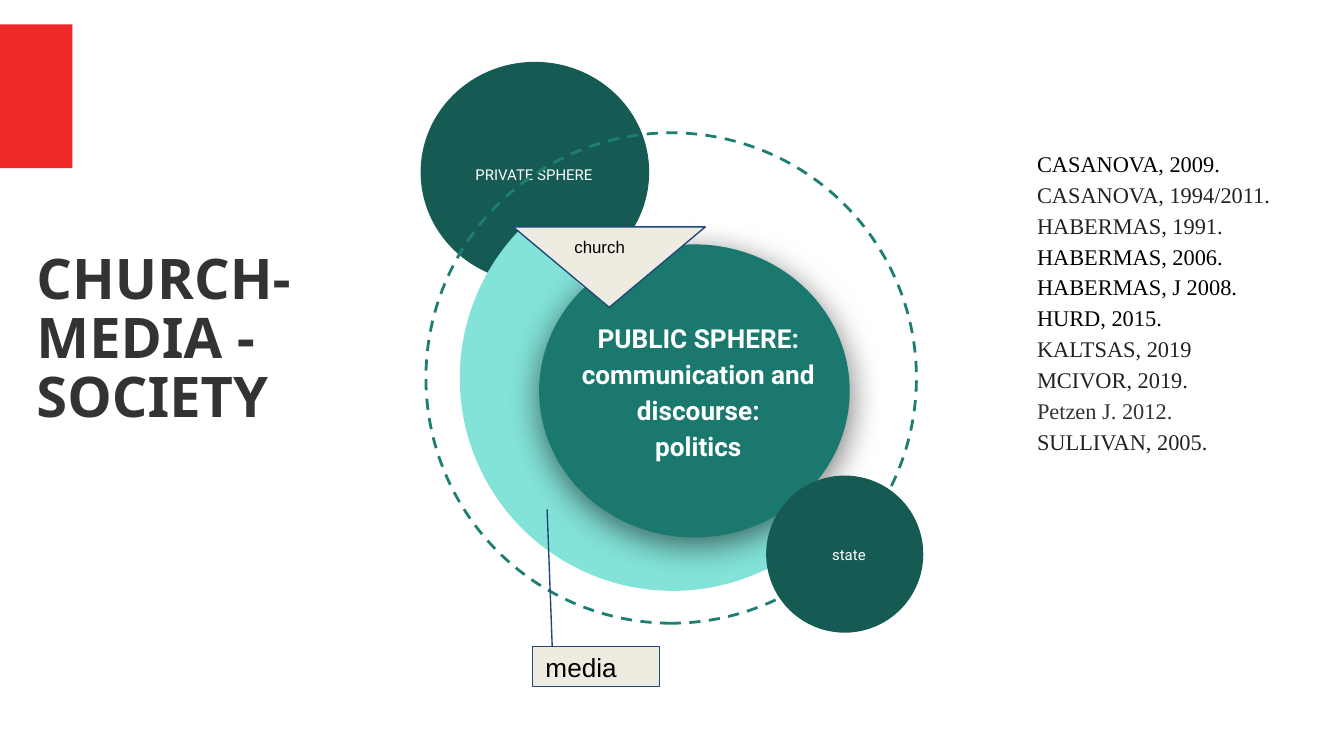
from lxml.etree import SubElement
from pptx import Presentation
from pptx.dml.color import RGBColor
from pptx.enum.dml import MSO_LINE
from pptx.enum.shapes import MSO_CONNECTOR, MSO_SHAPE
from pptx.enum.text import MSO_ANCHOR, MSO_AUTO_SIZE, PP_ALIGN
from pptx.oxml.ns import qn
from pptx.util import Cm, Pt

RED, DARK, TEAL, MINT = "EF2929", "155B54", "1B786E", "83E3D9"
DASH, NAVY, SAND = "1D7E74", "1F497D", "EEECE1"
WHITE, BLACK, GREY, INK = "FFFFFF", "000000", "333333", "222222"

# One list of (text, colour) runs per paragraph
REFS = [
    [("CASANOVA, 2009.", BLACK)],
    [("CASANOVA, 1994/2011.", INK)],
    [("HABERMAS, 1991. ", INK), ("HABERMAS, 2006. HABERMAS, J 2008.", BLACK)],
    [("HURD, 2015.", BLACK)],
    [("KALTSAS, 2019", INK)],
    [("MCIVOR, 2019.", INK)],
    [("Petzen J. 2012.", GREY)],
    [("SULLIVAN, 2005.", INK)],
]


def color(code):
    return RGBColor.from_string(code)


class Deck:
    font = "Roboto"
    pad = 0.25
    lead = 1.15

    def __init__(self, wide, high):
        self.prs = Presentation()
        self.prs.slide_width, self.prs.slide_height = Cm(wide), Cm(high)
        self.slide = self.prs.slides.add_slide(self.prs.slide_layouts[6])

    def shape(self, kind, box, fill=None, line=None, width=0.75):
        item = self.slide.shapes.add_shape(kind, *map(Cm, box))
        item.shadow.inherit = False
        if fill:
            item.fill.solid()
            item.fill.fore_color.rgb = color(fill)
        else:
            item.fill.background()
        if line:
            item.line.color.rgb = color(line)
            item.line.width = Pt(width)
        else:
            item.line.fill.background()
        return item

    def glow(self, item, blur, dist, alpha):
        """Cast a soft black shadow straight down."""
        fx = item._element.spPr.find(qn("a:effectLst"))
        cast = SubElement(fx, qn("a:outerShdw"), blurRad=str(Pt(blur)),
                          dist=str(Pt(dist)), dir="5400000",
                          algn="bl", rotWithShape="0")
        tint = SubElement(cast, qn("a:srgbClr"), val=BLACK)
        SubElement(tint, qn("a:alpha"), val=str(alpha * 1000))

    def put(self, item, paras, size, font=None, bold=False, lead=None,
            align=PP_ALIGN.LEFT, pad=None, indent=0,
            anchor=MSO_ANCHOR.MIDDLE):
        """Fill an item with paragraphs, each a list of (text, colour) runs."""
        frame = item.text_frame
        frame.word_wrap = True
        frame.vertical_anchor = anchor
        inset = Cm(self.pad if pad is None else pad)
        frame.margin_left = frame.margin_right = inset
        frame.margin_top = frame.margin_bottom = inset
        for i, runs in enumerate(paras):
            para = frame.add_paragraph() if i else frame.paragraphs[0]
            para.alignment = align
            para.line_spacing = lead or self.lead
            if indent:
                props = para._p.get_or_add_pPr()
                props.set("marL", str(Cm(indent)))
                props.set("indent", "0")
            for text, tint in runs:
                run = para.add_run()
                run.text = text
                run.font.size = Pt(size)
                run.font.name = font or self.font
                run.font.bold = bold
                run.font.color.rgb = color(tint)

    def text(self, box, paras, size, **style):
        item = self.slide.shapes.add_textbox(*map(Cm, box))
        self.put(item, paras, size, **style)
        return item

    def label(self, box, lines, size, bold=False):
        """Add centred white text on a disc."""
        self.text(box, [[(line, WHITE)] for line in lines], size,
                  bold=bold, align=PP_ALIGN.CENTER)

    def tag(self, kind, box, word, size):
        """Add a sand-coloured shape with one word in it."""
        item = self.shape(kind, box, SAND, NAVY)
        self.put(item, [[(word, BLACK)]], size, font="Arial", lead=1.0)

    def line(self, ends, tint, width):
        item = self.slide.shapes.add_connector(
            MSO_CONNECTOR.STRAIGHT, *map(Cm, ends))
        item.line.color.rgb = color(tint)
        item.line.width = Pt(width)
        SubElement(item._element.spPr, qn("a:effectLst"))


def main():
    deck = Deck(25.4, 14.29)
    oval = MSO_SHAPE.OVAL

    deck.shape(MSO_SHAPE.RECTANGLE, (0, 0.46, 1.37, 2.72), RED)
    deck.text((0.69, 0.38, 6.81, 12.12),
              [[("CHURCH- MEDIA - SOCIETY", GREY)]], 30,
              font="Noto Sans", bold=True, lead=0.88, pad=0)

    deck.shape(oval, (7.95, 1.17, 4.32, 4.17), DARK)
    deck.label((8.56, 1.93, 3.07, 2.69), ["PRIVATE SPHERE"], 8)

    ring = deck.shape(oval, (8.05, 2.51, 9.27, 9.27), line=DASH, width=1.5)
    ring.line.dash_style = MSO_LINE.DASH
    ring.rotation = 270
    pie = deck.shape(MSO_SHAPE.PIE, (8.69, 3.12, 8.05, 8.05), MINT)
    pie.adjustments[0], pie.adjustments[1] = 26.9, 135.11

    disc = deck.shape(oval, (10.19, 4.62, 5.87, 5.54), TEAL)
    deck.glow(disc, blur=18, dist=4, alpha=55)
    deck.label((10.34, 6.12, 5.72, 2.51),
               ["PUBLIC SPHERE:", "communication and discourse:", "politics"],
               14, bold=True)

    deck.shape(oval, (14.48, 8.99, 2.97, 2.97), DARK)
    deck.label((14.99, 9.45, 2.11, 2.03), ["state"], 8)

    deck.line((10.34, 9.63, 10.44, 12.32), NAVY, 0.75)
    deck.tag(MSO_SHAPE.RECTANGLE, (10.06, 12.22, 2.41, 0.76), "media", 14)
    deck.tag(MSO_SHAPE.FLOWCHART_MERGE, (9.7, 4.29, 3.63, 1.52), "church", 9)

    refs = deck.text((18.08, 2.51, 6.81, 6.32), REFS, 12,
                     font="Times New Roman", indent=1.27,
                     anchor=MSO_ANCHOR.TOP)
    refs.text_frame.auto_size = MSO_AUTO_SIZE.SHAPE_TO_FIT_TEXT

    deck.prs.save("out.pptx")


if __name__ == "__main__":
    main()
